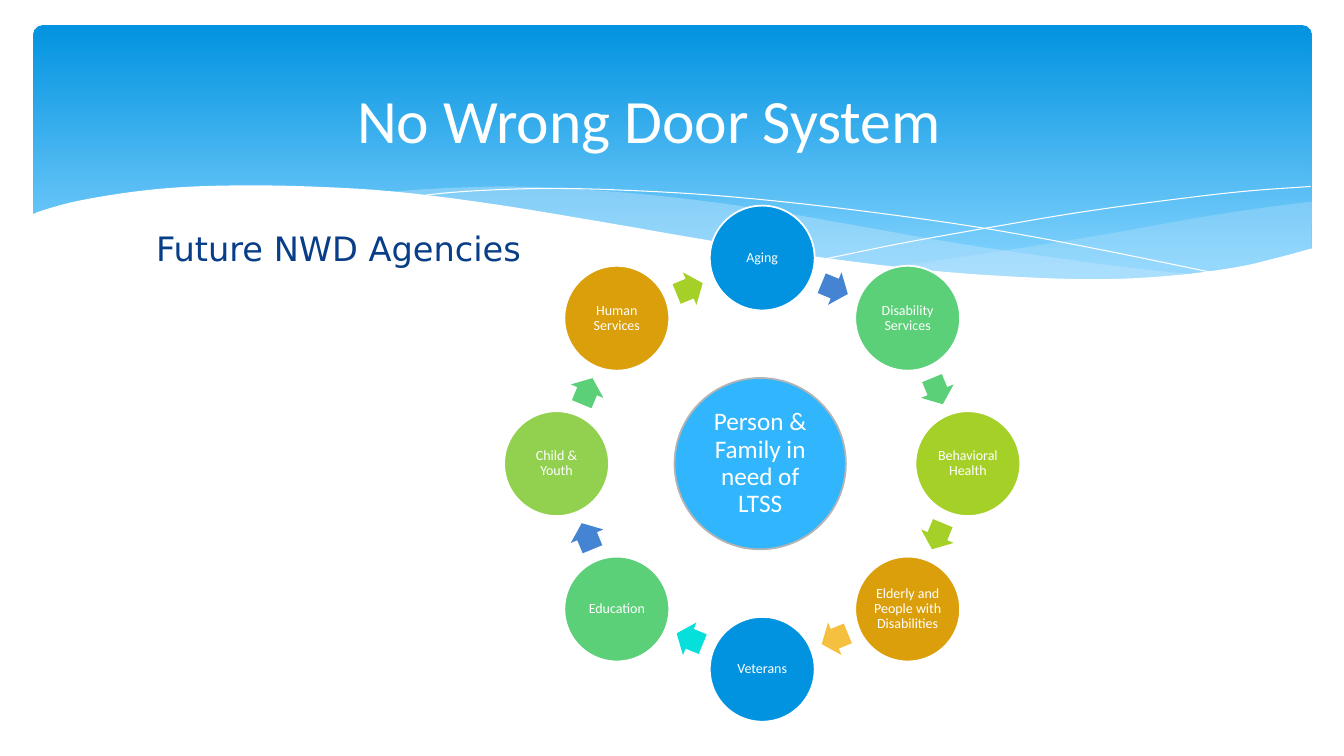
from dataclasses import dataclass
from math import cos, radians, sin
from typing import Optional

from pptx import Presentation
from pptx import util as u
from pptx.dml.color import RGBColor
from pptx.enum import shapes, text
from pptx.oxml.ns import qn
from lxml import etree

Point = tuple[float, float]
Curve = tuple[Point, ...]
WHITE = "FFFFFF"
RING_CENTER: Point = (7.56, 4.6)
AGENCY_RADIUS = 2.04
ARROW_RADIUS = 1.88
CURVE_STEPS = 5


@dataclass
class Wave:
    edges: tuple[Curve, ...]
    fill: Optional[str] = None
    opacity: int = 100


@dataclass
class Agency:
    name: str
    color: str
    arrow_color: str


WAVES = [
    Wave((((13.01, 2), (12.46, 2.07), (11.88, 2.16), (11.1, 2.3), (10.38, 2.42), (9.41, 2.57), (8.82, 2.65)),
          ((8.82, 2.65), (9.4, 2.71), (10.09, 2.76), (10.71, 2.78), (11.38, 2.76), (12.07, 2.69),
           (12.57, 2.59), (13.01, 2.47))), "C6E7FC", 29),
    Wave((((11.9, 2.73), (11.16, 2.65), (10.34, 2.54), (9.41, 2.4), (8.39, 2.22), (7.59, 2.08), (6.86, 1.98),
           (6.19, 1.91), (5.6, 1.87), (5.06, 1.85), (4.59, 1.86), (4.18, 1.88), (3.82, 1.91)),
          ((3.82, 1.91), (4.56, 1.99), (5.39, 2.11), (5.99, 2.22), (7.06, 2.4), (8.02, 2.55), (8.87, 2.66),
           (9.63, 2.74), (10.3, 2.77), (10.9, 2.78), (11.43, 2.77), (11.9, 2.73))), "C6E7FC", 40),
    Wave((((4.12, 1.95), (4.47, 1.91), (4.99, 1.88), (5.55, 1.87), (6.25, 1.89), (7.1, 1.94), (8.11, 2.04),
           (9.27, 2.19), (10.14, 2.33), (11.08, 2.51), (12.1, 2.72)),)),
    Wave((((8.18, 2.57), (8.96, 2.41), (9.97, 2.23), (10.75, 2.1), (11.55, 1.99), (12.32, 1.9), (13, 1.85)),)),
    Wave((((13.03, 2.46), (12.66, 2.56), (12.27, 2.65), (11.67, 2.73), (10.97, 2.77), (10.15, 2.75),
           (9.18, 2.68), (8.04, 2.54), (7.06, 2.39), (5.96, 2.2), (4.86, 2.02), (3.9, 1.9), (3.06, 1.85),
           (2.35, 1.84), (1.76, 1.86), (1.27, 1.91), (0.79, 1.99), (0.48, 2.07), (0.31, 2.13)),
          ((0.31, 3.29), (13.03, 3.29))), WHITE),
]

AGENCIES = [
    Agency("Aging", "0293E0", "4584D3"),
    Agency("Disability Services", "5BD078", "5BD078"),
    Agency("Behavioral Health", "A5D028", "A5D028"),
    Agency("Elderly and People with Disabilities", "DC9F0C", "F5C040"),
    Agency("Veterans", "0293E0", "05E0DB"),
    Agency("Education", "5BD078", "4584D3"),
    Agency("Child & Youth", "92D050", "5BD078"),
    Agency("Human Services", "DC9F0C", "A5D028"),
]


def rgb(color: str) -> RGBColor:
    return RGBColor.from_string(color)


def style(shape, fill: Optional[str], line: Optional[str] = None, width: float = 0) -> None:
    shape.shadow.inherit = False
    if fill:
        shape.fill.solid()
        shape.fill.fore_color.rgb = rgb(fill)
    else:
        shape.fill.background()
    if line:
        shape.line.color.rgb = rgb(line)
        shape.line.width = u.Pt(width)
    else:
        shape.line.fill.background()


def write(shape, words: str, size: float, color: str, font: str = "Calibri",
          alignment=text.PP_ALIGN.CENTER):
    paragraph = shape.text_frame.paragraphs[0]
    paragraph.alignment = alignment
    run = paragraph.add_run()
    run.text = words
    run.font.size = u.Pt(size)
    run.font.name = font
    run.font.color.rgb = rgb(color)
    return paragraph


def place(shape, left: float, top: float, width: float, height: float) -> None:
    shape.left, shape.top = u.Inches(left), u.Inches(top)
    shape.width, shape.height = u.Inches(width), u.Inches(height)


def smooth(curve: Curve) -> list[Point]:
    padded = (curve[0], *curve, curve[-1])
    points = [curve[0]]
    for before, start, end, after in zip(padded, padded[1:], padded[2:], padded[3:]):
        for step in range(1, CURVE_STEPS + 1):
            t = step / CURVE_STEPS
            x, y = (b + ((c - a) * t + (2 * a - 5 * b + 4 * c - d) * t ** 2
                         + (3 * b - a - 3 * c + d) * t ** 3) / 2
                    for a, b, c, d in zip(before, start, end, after))
            points.append((x, y))
    return points


def draw_band(slide) -> None:
    band = slide.shapes.add_shape(shapes.MSO_SHAPE.ROUNDED_RECTANGLE, 0, 0, 0, 0)
    place(band, 0.33, 0.25, 12.68, 2.7)
    band.adjustments[0] = 0.034
    style(band, None)
    band.fill.gradient()
    band.fill.gradient_angle = 270
    for stop, color, position in zip(band.fill.gradient_stops, ("0293E0", "83D3FE"), (0, 0.9)):
        stop.color.rgb = rgb(color)
        stop.position = position


def draw_wave(slide, wave: Wave) -> None:
    start, *rest = [(u.Inches(x), u.Inches(y)) for edge in wave.edges for x, y in smooth(edge)]
    builder = slide.shapes.build_freeform(*start)
    builder.add_line_segments(rest, close=wave.fill is not None)
    shape = builder.convert_to_shape()
    style(shape, wave.fill, None if wave.fill else WHITE)
    if wave.opacity < 100:
        color = shape.element.spPr.find(qn("a:solidFill"))[0]
        etree.SubElement(color, qn("a:alpha"), val=str(wave.opacity * 1000))


def draw_circle(slide, center: Point, diameter: float, words: str, size: float,
                fill: str, line: str, inset: float) -> None:
    circle = slide.shapes.add_shape(shapes.MSO_SHAPE.OVAL, 0, 0, 0, 0)
    place(circle, center[0] - diameter / 2, center[1] - diameter / 2, diameter, diameter)
    style(circle, fill, line, 1.25)
    frame = circle.text_frame
    frame.word_wrap = True
    frame.vertical_anchor = text.MSO_ANCHOR.MIDDLE
    frame.margin_left = frame.margin_right = frame.margin_top = frame.margin_bottom = u.Inches(inset)
    write(circle, words, size, WHITE).line_spacing = 0.9


def ring_point(radius: float, degrees: float) -> Point:
    angle = radians(degrees)
    return RING_CENTER[0] + radius * sin(angle), RING_CENTER[1] - radius * cos(angle)


def draw_arrow(slide, degrees: float, color: str) -> None:
    x, y = ring_point(ARROW_RADIUS, degrees)
    arrow = slide.shapes.add_shape(shapes.MSO_SHAPE.RIGHT_ARROW, 0, 0, 0, 0)
    place(arrow, x - 0.14, y - 0.175, 0.28, 0.35)
    arrow.adjustments[0] = 0.6
    arrow.adjustments[1] = 0.5
    arrow.rotation = degrees
    style(arrow, color)


def main() -> None:
    presentation = Presentation()
    presentation.slide_width = u.Inches(13.33)
    presentation.slide_height = u.Inches(7.5)
    slide = presentation.slides.add_slide(presentation.slide_layouts[5])

    draw_band(slide)
    for wave in WAVES:
        draw_wave(slide, wave)

    title = slide.shapes.title
    title.element.getparent().append(title.element)
    place(title, 0.44, 0.49, 12, 1.37)
    title.text_frame.vertical_anchor = text.MSO_ANCHOR.MIDDLE
    write(title, "No Wrong Door System", 44, WHITE)

    step = 360 / len(AGENCIES)
    for index, agency in enumerate(AGENCIES):
        degrees = index * step
        draw_circle(slide, ring_point(AGENCY_RADIUS, degrees), 1.04, agency.name, 10,
                    agency.color, WHITE, 0.01)
        draw_arrow(slide, degrees + step / 2, agency.arrow_color)
    draw_circle(slide, (7.54, 4.6), 1.7, "Person & Family in need of LTSS", 18, "31B6FD", "B4B4B4", 0.03)

    subtitle = slide.shapes.add_textbox(0, 0, 0, 0)
    place(subtitle, 1.45, 2.21, 4.33, 0.5)
    subtitle.text_frame.word_wrap = True
    write(subtitle, "Future NWD Agencies", 24, "073E87", "DejaVu Sans", text.PP_ALIGN.LEFT)

    presentation.save("out.pptx")


if __name__ == "__main__":
    main()
